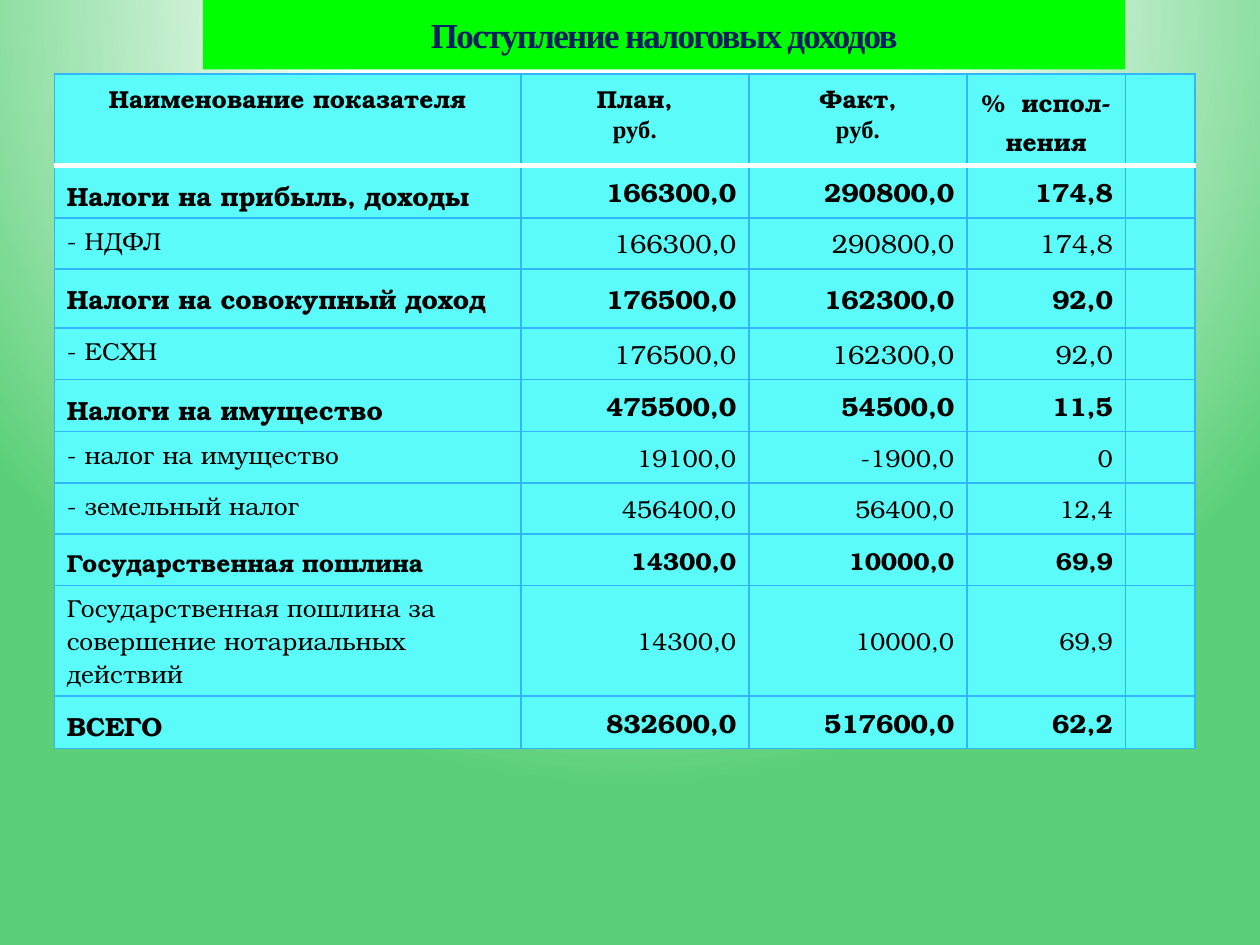
import pptx
import pptx.util
import pptx.oxml
import pptx.oxml.ns
import pptx.dml.color
import pptx.enum.text
from dataclasses import dataclass

Pt = pptx.util.Pt
Rgb = pptx.dml.color.RGBColor.from_string
Align = pptx.enum.text.PP_ALIGN
Anchor = pptx.enum.text.MSO_ANCHOR
NS = pptx.oxml.ns.nsdecls("a", "p")


@dataclass(frozen=True)
class Theme:
    white: str = "FFFFFF"
    green: str = "5BD078"
    lime: str = "00FF00"
    navy: str = "002060"
    glow: str = "AFCCDE"
    cyan: str = "5AFBF8"
    blue: str = "31B6FD"
    black: str = "000000"
    serif: str = "Times New Roman"
    book: str = "TeX Gyre Bonum"
    head: int = 20
    large: int = 15
    small: int = 14


class Deck:
    def __init__(self, theme):
        self.theme = theme
        self.file = pptx.Presentation()
        self.file.slide_width = Pt(720)
        self.file.slide_height = Pt(540)
        self.slide = self.file.slides.add_slide(self.file.slide_layouts[5])

    def backdrop(self):
        look = self.theme
        stops = "".join(
            f'<a:gs pos="{pos}"><a:srgbClr val="{tone}"/></a:gs>'
            for pos, tone in ((0, look.white), (35000, look.white), (100000, look.green)))
        node = pptx.oxml.parse_xml(
            f'<p:bg {NS}><p:bgPr><a:gradFill rotWithShape="1"><a:gsLst>{stops}</a:gsLst>'
            '<a:path path="circle"><a:fillToRect l="50000" t="-80000" r="50000" b="180000"/>'
            '</a:path></a:gradFill><a:effectLst/></p:bgPr></p:bg>')
        self.slide.element.cSld.insert(0, node)

    def run(self, para, text, size, bold=False, font=None, tone=None):
        run = para.add_run()
        run.text = text
        run.font.size = Pt(size)
        run.font.bold = bold
        run.font.name = font or self.theme.book
        run.font.color.rgb = Rgb(tone or self.theme.black)
        return run

    def title(self, text, left, top, width, height):
        look = self.theme
        box = self.slide.shapes.title
        box.left, box.top, box.width, box.height = map(Pt, (left, top, width, height))
        box.fill.solid()
        box.fill.fore_color.rgb = Rgb(look.lime)
        frame = box.text_frame
        frame.word_wrap = True
        frame.auto_size = pptx.enum.text.MSO_AUTO_SIZE.NONE
        frame.vertical_anchor = Anchor.MIDDLE
        para = frame.paragraphs[0]
        para.alignment = Align.CENTER
        run = self.run(para, text, look.head, True, look.serif, look.navy)
        props = run.font._element
        props.set("spc", "-100")
        props.insert(0, pptx.oxml.parse_xml(
            f'<a:ln {NS} w="3175"><a:solidFill><a:srgbClr val="{look.glow}">'
            '<a:alpha val="25000"/></a:srgbClr></a:solidFill></a:ln>'))

    def grid(self, left, top, cols, rows):
        frame = self.slide.shapes.add_table(
            len(rows), len(cols), Pt(left), Pt(top), Pt(sum(cols)), Pt(sum(rows)))
        table = frame.table
        for col, width in zip(table.columns, cols):
            col.width = Pt(width)
        for row, height in zip(table.rows, rows):
            row.height = Pt(height)
        for r in range(len(rows)):
            for c in range(len(cols)):
                self.paint(table.cell(r, c), r)
        return table

    def paint(self, cell, row):
        look = self.theme
        thick = {0: "lnB", 1: "lnT"}.get(row)
        props = cell._tc.get_or_add_tcPr()
        for side in ("lnL", "lnR", "lnT", "lnB"):
            tone, width = (look.white, 3) if side == thick else (look.blue, 1)
            props.append(pptx.oxml.parse_xml(
                f'<a:{side} {NS} w="{Pt(width)}"><a:solidFill><a:srgbClr val="{tone}"/>'
                f'</a:solidFill></a:{side}>'))
        cell.fill.solid()
        cell.fill.fore_color.rgb = Rgb(look.cyan)

    def header(self, cell, lines, gap):
        look = self.theme
        frame = cell.text_frame
        for i, text in enumerate(lines):
            para = frame.add_paragraph() if i else frame.paragraphs[0]
            para.alignment = Align.CENTER
            para.line_spacing = gap
            self.run(para, text, look.small, True, look.serif if i else look.book)

    def label(self, cell, text, size, bold):
        if bold:
            cell.margin_top, cell.margin_bottom = Pt(6), Pt(2)
        self.run(cell.text_frame.paragraphs[0], text, size, bold)

    def value(self, cell, text, size, bold):
        cell.vertical_anchor = Anchor.MIDDLE
        para = cell.text_frame.paragraphs[0]
        para.alignment = Align.RIGHT
        self.run(para, text, size, bold)


def main():
    look = Theme()
    big, low = look.large, look.small
    heads = [(["Наименование показателя"], 1), (["План,", "руб."], 1),
             (["Факт,", "руб."], 1), (["%  испол-нения"], 1.1)]
    data = [
        ("Налоги на прибыль, доходы", big, True, big, "166300,0", "290800,0", "174,8"),
        ("- НДФЛ", low, False, big, "166300,0", "290800,0", "174,8"),
        ("Налоги на совокупный доход", big, True, big, "176500,0", "162300,0", "92,0"),
        ("- ЕСХН", low, False, big, "176500,0", "162300,0", "92,0"),
        ("Налоги на имущество", big, True, big, "475500,0", "54500,0", "11,5"),
        ("- налог на имущество", low, False, low, "19100,0", "-1900,0", "0"),
        ("- земельный налог", low, False, low, "456400,0", "56400,0", "12,4"),
        ("Государственная пошлина", low, True, low, "14300,0", "10000,0", "69,9"),
        ("Государственная пошлина за совершение нотариальных действий",
         low, False, low, "14300,0", "10000,0", "69,9"),
        ("ВСЕГО", big, True, big, "832600,0", "517600,0", "62,2"),
    ]
    rows = [48] + [29.3] * len(data)
    rows[3], rows[9] = 33.7, 62.9

    deck = Deck(look)
    deck.backdrop()
    table = deck.grid(31, 42.3, [266.6, 130.3, 124.6, 90.7, 39.6], rows)
    for c, (lines, gap) in enumerate(heads):
        deck.header(table.cell(0, c), lines, gap)
    for r, (name, size, bold, digit, *sums) in enumerate(data, 1):
        deck.label(table.cell(r, 0), name, size, bold)
        for c, text in enumerate(sums, 1):
            deck.value(table.cell(r, c), text, digit, bold)
    deck.title("Поступление налоговых доходов", 116, 0, 527, 39.6)
    deck.file.save("out.pptx")


if __name__ == "__main__":
    main()
